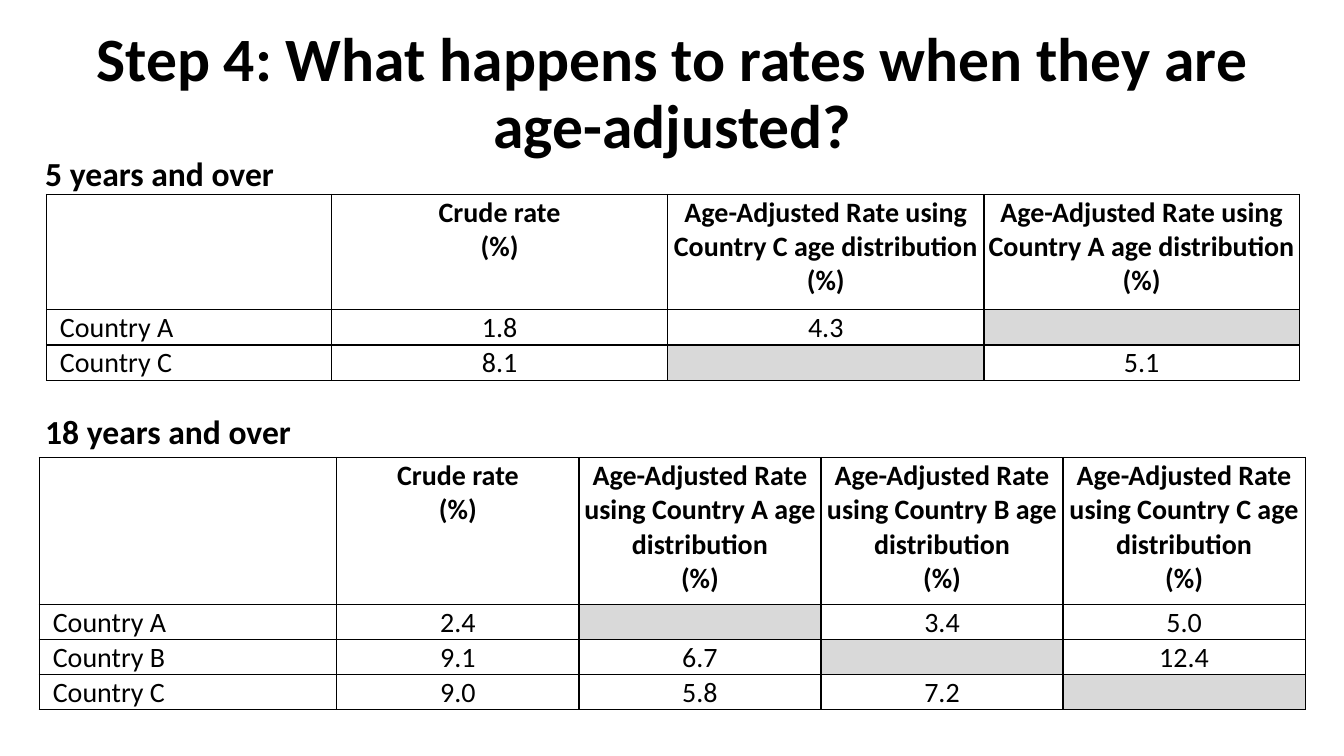
from dataclasses import dataclass
from lxml.etree import SubElement
from pptx import Presentation
from pptx.dml.color import RGBColor as RGB
from pptx.enum.text import MSO_ANCHOR as Anchor, MSO_AUTO_SIZE as Fit, PP_ALIGN as Align
from pptx.oxml.ns import qn
from pptx.util import Cm, Pt


@dataclass(frozen=True)
class Theme:
    font: str = "Calibri"
    ink: str = "000000"
    paper: str = "FFFFFF"
    gray: str = "D9D9D9"
    title: int = 44
    label: int = 24
    cell: int = 20


THEME = Theme()


def write(para, text, size, bold=False, align=Align.LEFT):
    para.alignment = align
    run = para.add_run()
    run.text = text
    font = run.font
    font.name, font.size, font.bold = THEME.font, Pt(size), bold
    font.color.rgb = RGB.from_string(THEME.ink)


def rule(cell):
    props = cell._tc.get_or_add_tcPr()
    for at, side in enumerate(("a:lnL", "a:lnR", "a:lnT", "a:lnB")):
        line = SubElement(props, qn(side), w=str(Pt(1)))
        fill = SubElement(line, qn("a:solidFill"))
        SubElement(fill, qn("a:srgbClr"), val=THEME.ink)
        props.insert(at, line)


def add_title(slide, box, text):
    title = slide.shapes.title
    title.left, title.top, title.width, title.height = map(Cm, box)
    frame = title.text_frame
    frame.auto_size = Fit.NONE
    frame.word_wrap = True
    frame.vertical_anchor = Anchor.MIDDLE
    para = frame.paragraphs[0]
    para.line_spacing = 0.9
    write(para, text, THEME.title, True, Align.CENTER)


def add_label(slide, box, text):
    frame = slide.shapes.add_textbox(*map(Cm, box)).text_frame
    frame.word_wrap = True
    write(frame.paragraphs[0], text, THEME.label, True)


def fill_cell(cell, text, head, first, anchor):
    cell.margin_left = Cm(0.34 if first else 0.03)
    cell.margin_right = cell.margin_top = Cm(0.03)
    cell.margin_bottom = 0
    cell.vertical_anchor = Anchor.TOP if head else anchor
    cell.fill.solid()
    cell.fill.fore_color.rgb = RGB.from_string(THEME.gray if text is None else THEME.paper)
    rule(cell)
    frame = cell.text_frame
    for at, line in enumerate(text.split("\n") if text else []):
        para = frame.add_paragraph() if at else frame.paragraphs[0]
        write(para, line, THEME.cell, head, Align.LEFT if first else Align.CENTER)


def add_rates(slide, box, cols, top, bases, data, anchor):
    heads = ["", "Crude rate\n(%)"]
    heads += [f"Age-Adjusted Rate using Country {base} age distribution\n(%)" for base in bases]
    rows = [heads] + [[f"Country {name}", *rates] for name, *rates in data]
    grid = slide.shapes.add_table(len(rows), len(cols), *map(Cm, box)).table
    grid.first_row = grid.horz_banding = False
    for col, width in zip(grid.columns, cols):
        col.width = Cm(width)
    for y, row in enumerate(rows):
        grid.rows[y].height = Cm(0.87 if y else top)
        for x, text in enumerate(row):
            fill_cell(grid.cell(y, x), text, y == 0, x == 0, anchor)


def main():
    deck = Presentation()
    deck.slide_width, deck.slide_height = Cm(33.87), Cm(19.05)
    slide = deck.slides.add_slide(deck.slide_layouts[5])
    add_title(slide, (0.66, 0.56, 32.59, 3.68),
              "Step 4: What happens to rates when they are age-adjusted?")
    add_rates(slide, (1.17, 4.9, 31.5, 4.64), (7.19, 8.46, 7.98, 7.94), 2.9, "CA",
              [("A", "1.8", "4.3", None), ("C", "8.1", None, "5.1")], Anchor.TOP)
    add_label(slide, (0.89, 3.73, 11.53, 1.27), "5 years and over")
    add_rates(slide, (0.99, 11.53, 31.9, 6.32), (7.5, 6.1, 6.1, 6.1, 6.1), 3.71, "ABC",
              [("A", "2.4", None, "3.4", "5.0"),
               ("B", "9.1", "6.7", None, "12.4"),
               ("C", "9.0", "5.8", "7.2", None)], Anchor.BOTTOM)
    add_label(slide, (0.89, 10.24, 11.53, 1.27), "18 years and over")
    deck.save("out.pptx")


if __name__ == "__main__":
    main()
